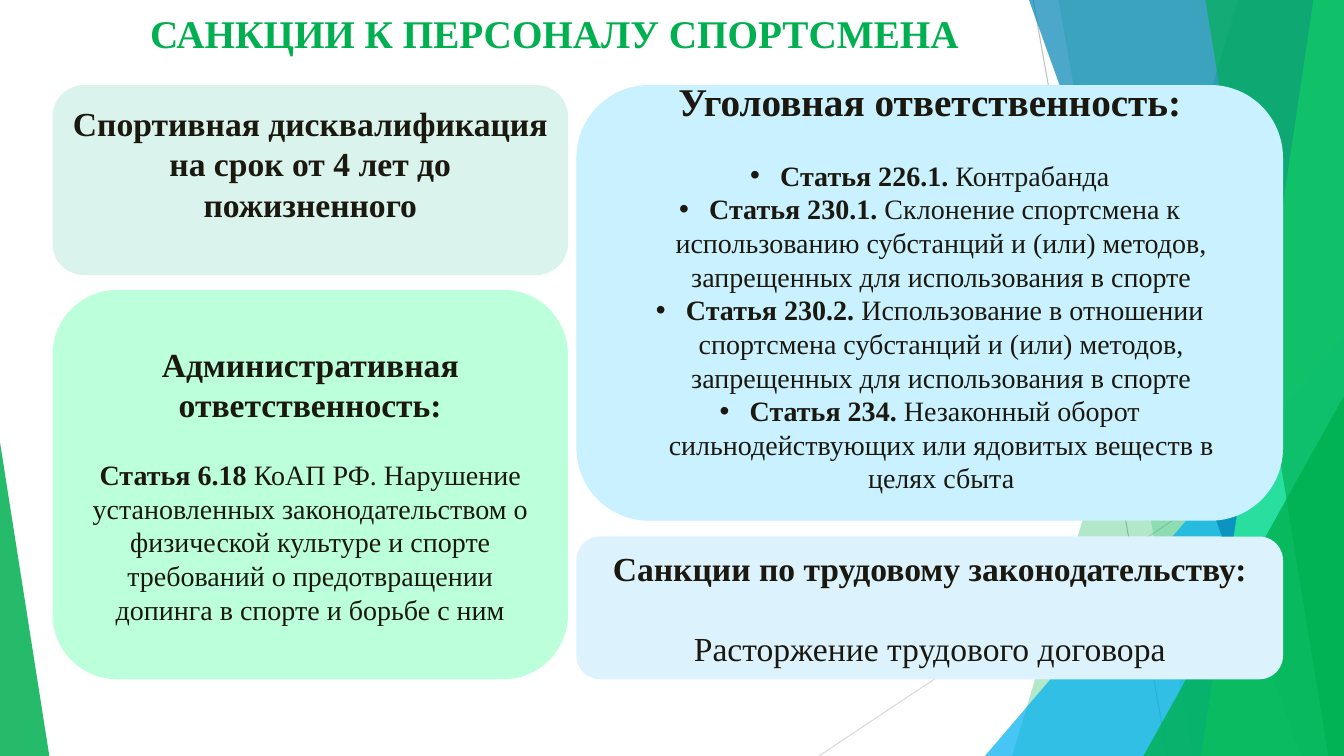
from dataclasses import dataclass

from lxml.etree import SubElement as Sub
from pptx import Presentation
from pptx.dml.color import RGBColor as Rgb
from pptx.enum.shapes import MSO_CONNECTOR as Link, MSO_SHAPE as Kind
from pptx.enum.text import MSO_ANCHOR as Anchor, PP_ALIGN as Align
from pptx.oxml.ns import qn
from pptx.util import Pt

PX = 9525
WIDE, HIGH = 1280, 720


@dataclass(frozen=True)
class Theme:
    font: str = "Times New Roman"
    ink: str = "1B190F"
    green: str = "00B050"
    blue: str = "00B0F0"
    teal: str = "0084B4"
    lime: str = "37FF92"
    gray: str = "BFBFBF"
    pale: str = "D9D9D9"
    mint: str = "DAF3ED"
    sky: str = "C9F1FF"
    leaf: str = "BCFFDB"
    ice: str = "DCF3FE"
    big: int = 28
    mid: int = 24
    small: int = 20


T = Theme()


def px(*vals):
    return [round(v * PX) for v in vals]


def paint(shape, color, alpha=100):
    shape.shadow.inherit = False
    shape.line.fill.background()
    shape.fill.solid()
    shape.fill.fore_color.rgb = Rgb.from_string(color)
    if alpha < 100:
        tint = shape.fill._xPr.find(qn("a:solidFill"))[0]
        Sub(tint, qn("a:alpha"), val=str(alpha * 1000))


def line(slide, ends, color):
    item = slide.shapes.add_connector(Link.STRAIGHT, *px(*ends))
    item.line.color.rgb = Rgb.from_string(color)
    item.line.width = Pt(0.75)
    Sub(item._element.spPr, qn("a:effectLst"))


def band(slide, top, base, color, alpha):
    """Fill from a slanted left edge to the right edge of the slide."""
    form = slide.shapes.build_freeform(top, 0, scale=PX)
    form.add_line_segments([(WIDE, 0), (WIDE, HIGH), (base, HIGH)])
    paint(form.convert_to_shape(), color, alpha)


def wedge(slide, left, top, width, tip, color, alpha):
    """Right triangle that stands on the bottom edge of the slide."""
    item = slide.shapes.add_shape(
        Kind.ISOSCELES_TRIANGLE, *px(left, top, width, HIGH - top))
    item.adjustments[0] = tip
    paint(item, color, alpha)


def write(frame, text, lead="", size=T.small, bold=False, color=T.ink,
          align=Align.CENTER, gap=0, dot=False):
    """Add a paragraph: an optional bold lead, then the text."""
    first = not frame.paragraphs[0].runs
    para = frame.paragraphs[0] if first else frame.add_paragraph()
    if dot:
        props = para._p.get_or_add_pPr()
        hang = 22 * PX
        props.set("marL", str(hang))
        props.set("indent", str(-hang))
        Sub(props, qn("a:buFont"), typeface="Arial")
        Sub(props, qn("a:buChar"), char="•")
    para.alignment = align
    para.line_spacing = Pt(size * 1.2)
    para.space_before = Pt(gap)
    for part, heavy in ((lead, True), (text, bold)):
        if part:
            run = para.add_run()
            run.text = part
            font = run.font
            font.name, font.size, font.bold = T.font, Pt(size), heavy
            font.color.rgb = Rgb.from_string(color)


def setup(frame, side, foot=5):
    frame.word_wrap = True
    frame.vertical_anchor = Anchor.MIDDLE
    frame.margin_left = frame.margin_right = side * PX
    frame.margin_top, frame.margin_bottom = px(5, foot)


def card(slide, place, color, side=14, foot=5):
    item = slide.shapes.add_shape(Kind.ROUNDED_RECTANGLE, *px(*place))
    paint(item, color)
    setup(item.text_frame, side, foot)
    return item.text_frame


def decor(slide):
    line(slide, (984, 0, 1112, HIGH), T.gray)
    line(slide, (WIDE, 387, 780, HIGH), T.pale)
    band(slide, 1179, 964, T.green, 30)
    band(slide, 1008, 1136, T.green, 20)
    wedge(slide, 938, 320, 342, 1, T.blue, 72)
    band(slide, 980, 1239, T.teal, 70)
    band(slide, 1251, 1144, T.lime, 70)
    band(slide, 1148, 1265, T.green, 65)
    wedge(slide, 1089, 377, 191, 1, T.green, 80)
    wedge(slide, 0, 421, 47, 0, T.green, 85)


def main():
    deck = Presentation()
    deck.slide_width, deck.slide_height = px(WIDE, HIGH)
    slide = deck.slides.add_slide(deck.slide_layouts[6])
    decor(slide)

    # Title
    head = slide.shapes.add_textbox(*px(133, 0, 1089, 63)).text_frame
    setup(head, 10)
    write(head, "САНКЦИИ К ПЕРСОНАЛУ СПОРТСМЕНА", size=T.big, bold=True,
          color=T.green, align=Align.LEFT)

    # Sports ban
    ban = card(slide, (50, 81, 491, 181), T.mint, side=9, foot=37)
    write(ban, "Спортивная дисквалификация на срок от 4 лет до пожизненного",
          size=T.mid, bold=True)

    # Criminal law
    crime = card(slide, (549, 81, 673, 415), T.sky, foot=37)
    write(crime, "Уголовная ответственность:", size=T.big, bold=True)
    acts = [
        ("226.1", "Контрабанда"),
        ("230.1", "Склонение спортсмена к использованию субстанций и (или) "
                  "методов, запрещенных для использования в спорте"),
        ("230.2", "Использование в отношении спортсмена субстанций и (или) "
                  "методов, запрещенных для использования в спорте"),
        ("234", "Незаконный оборот сильнодействующих или ядовитых веществ "
                "в целях сбыта"),
    ]
    for row, (num, text) in enumerate(acts):
        write(crime, text, lead=f" Статья {num}. ", dot=True,
              gap=0 if row else 24)

    # Administrative law
    admin = card(slide, (50, 276, 491, 371), T.leaf)
    write(admin, "Административная ответственность:", size=T.mid, bold=True)
    write(admin, "КоАП РФ. Нарушение установленных законодательством о "
                 "физической культуре и спорте требований о предотвращении "
                 "допинга в спорте и борьбе с ним",
          lead="Статья 6.18 ", gap=24)

    # Labour law
    labor = card(slide, (549, 511, 673, 136), T.ice)
    write(labor, "Санкции по трудовому законодательству:", size=T.mid,
          bold=True)
    write(labor, "Расторжение трудового договора", size=T.mid, gap=28.8)

    deck.save("out.pptx")


if __name__ == "__main__":
    main()
